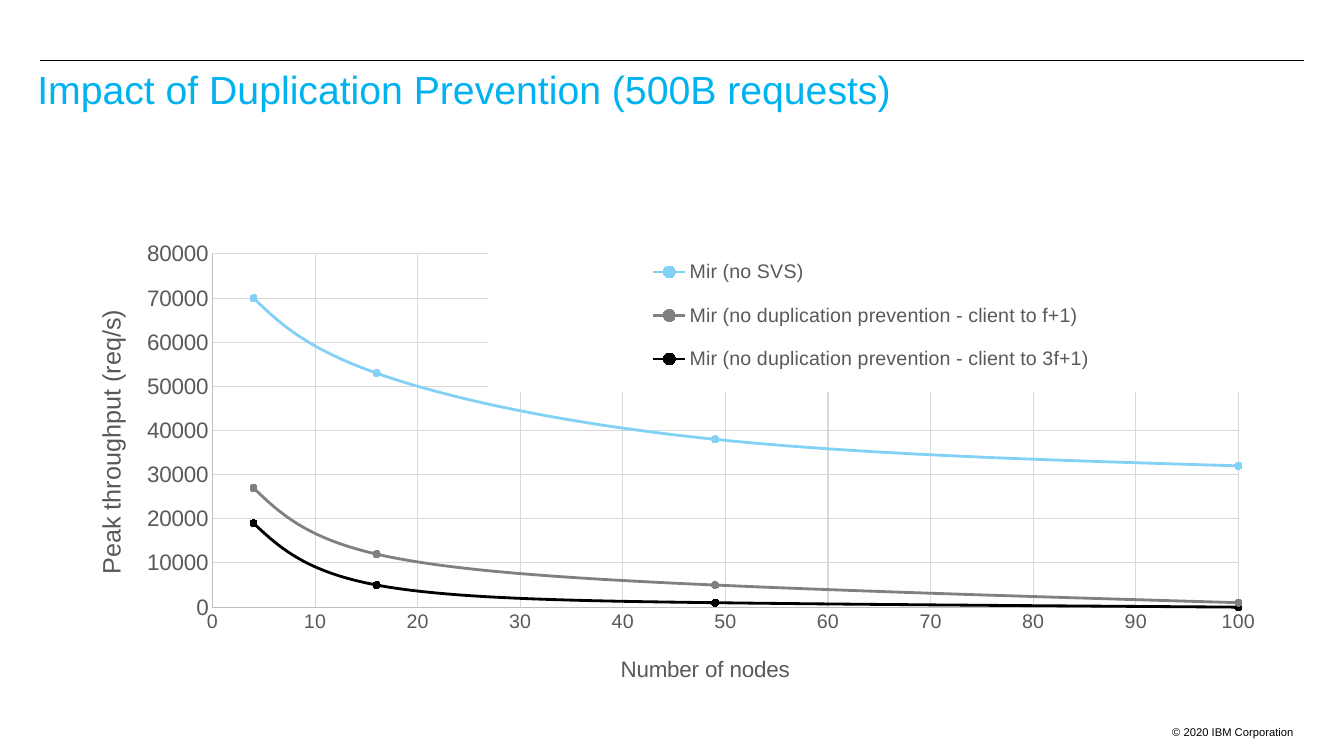
import pptx
import pptx.chart.data
import pptx.dml.color
import pptx.enum.chart
import pptx.enum.shapes
import pptx.enum.text
import pptx.oxml
import pptx.oxml.ns
import pptx.util
from pptx.util import Inches, Pt

FONT = "Arial"
TITLE = "Impact of Duplication Prevention (500B requests)"
COPYRIGHT = "© 2020 IBM Corporation"
NODES = [4, 16, 49, 100]
SERIES = [
    ("Mir (no SVS)", "83D1F5", [70000, 53000, 38000, 32000]),
    ("Mir (no duplication prevention - client to f+1)", "808080", [27000, 12000, 5000, 1000]),
    ("Mir (no duplication prevention - client to 3f+1)", "000000", [19000, 5000, 1000, 0]),
]
# title, title size, tick label size, maximum, major unit, title position in the chart
X_AXIS = ("Number of nodes", 16, 14, 100, 10, {"x": 0.473, "y": 0.908})
Y_AXIS = ("Peak throughput (req/s)", 18, 16, 80000, 10000, {"x": 0.069, "y": 0.267})
PLOT_AREA = {"x": 0.163, "y": 0.172, "w": 0.787, "h": 0.655}
LEGEND_AREA = {"x": 0.3745, "y": 0.145, "w": 0.588, "h": 0.282}
GREY_TEXT = "595959"
NAMESPACES = pptx.oxml.ns.nsdecls("c", "a")


def color(hex_value):
    return pptx.dml.color.RGBColor.from_string(hex_value)


def style_font(font, size, hex_value):
    font.name = FONT
    font.size = Pt(size)
    font.bold = False
    font.color.rgb = color(hex_value)


def style_line(line, hex_value, width=0.75):
    line.color.rgb = color(hex_value)
    line.width = Pt(width)


def write_text(frame, text, size, hex_value, align=None, line_spacing=None):
    paragraph = frame.paragraphs[0]
    run = paragraph.add_run()
    run.text = text
    style_font(run.font, size, hex_value)
    if align is not None:
        paragraph.alignment = align
    if line_spacing is not None:
        paragraph.line_spacing = line_spacing


def place(element, area, index, inner=False):
    """Give a chart part a manual layout in fractions of the chart."""
    for old in element.findall(pptx.oxml.ns.qn("c:layout")):
        element.remove(old)
    target = '<c:layoutTarget val="inner"/>' if inner else ""
    modes = "".join(f'<c:{key}Mode val="edge"/>' for key in area if key in "xy")
    values = "".join(f'<c:{key} val="{value}"/>' for key, value in area.items())
    element.insert(index, pptx.oxml.parse_xml(
        f"<c:layout {NAMESPACES}><c:manualLayout>{target}{modes}{values}"
        "</c:manualLayout></c:layout>"))


def format_axis(axis, title, title_size, tick_size, maximum, unit, title_area):
    axis.minimum_scale = 0
    axis.maximum_scale = maximum
    axis.major_unit = unit
    axis.major_tick_mark = axis.minor_tick_mark = pptx.enum.chart.XL_TICK_MARK.NONE
    axis.has_major_gridlines = True
    style_line(axis.major_gridlines.format.line, "D9D9D9")
    style_line(axis.format.line, "BFBFBF")
    style_font(axis.tick_labels.font, tick_size, GREY_TEXT)
    axis.tick_labels.number_format = "General"
    axis.tick_labels.number_format_is_linked = False
    axis.has_title = True
    write_text(axis.axis_title.text_frame, title, title_size, GREY_TEXT)
    place(axis.axis_title._element, title_area, 1)


def format_series(series, hex_value):
    style_line(series.format.line, hex_value, 2)
    marker = series.marker
    marker.style = pptx.enum.chart.XL_MARKER_STYLE.CIRCLE
    marker.size = 5
    marker.format.fill.solid()
    marker.format.fill.fore_color.rgb = color(hex_value)
    style_line(marker.format.line, hex_value)
    for smooth in series._element.findall(pptx.oxml.ns.qn("c:smooth")):
        smooth.set("val", "1")


def format_legend(chart):
    chart.has_legend = True
    legend = chart.legend
    legend.position = pptx.enum.chart.XL_LEGEND_POSITION.BOTTOM
    legend.include_in_layout = False
    style_font(legend.font, 14, GREY_TEXT)
    place(legend._element, LEGEND_AREA, 1)
    overlay = legend._element.find(pptx.oxml.ns.qn("c:overlay"))
    overlay.addnext(pptx.oxml.parse_xml(
        f'<c:spPr {NAMESPACES}><a:solidFill><a:srgbClr val="FFFFFF"/></a:solidFill>'
        "<a:ln><a:noFill/></a:ln></c:spPr>"))


def add_throughput_chart(slide):
    data = pptx.chart.data.XyChartData()
    for name, _, values in SERIES:
        points = data.add_series(name)
        for nodes, throughput in zip(NODES, values):
            points.add_data_point(nodes, throughput)
    chart = slide.shapes.add_chart(
        pptx.enum.chart.XL_CHART_TYPE.XY_SCATTER_SMOOTH,
        Inches(0), Inches(1.6), Inches(12.93), Inches(5.35), data).chart
    chart.has_title = False
    style_font(chart.font, 10, "000000")
    plot = chart.plots[0]
    plot.vary_by_categories = False
    for series, (_, hex_value, _) in zip(plot.series, SERIES):
        format_series(series, hex_value)
    format_axis(chart.category_axis, *X_AXIS)
    format_axis(chart.value_axis, *Y_AXIS)
    format_legend(chart)
    plot_area = chart._chartSpace.find(".//" + pptx.oxml.ns.qn("c:plotArea"))
    place(plot_area, PLOT_AREA, 0, inner=True)


def main():
    presentation = pptx.Presentation()
    presentation.slide_width = Inches(13.33)
    presentation.slide_height = Inches(7.5)
    slide = presentation.slides.add_slide(presentation.slide_layouts[5])

    rule = slide.shapes.add_connector(
        pptx.enum.shapes.MSO_CONNECTOR.STRAIGHT,
        Inches(0.4), Inches(0.6), Inches(12.93), Inches(0.6))
    style_line(rule.line, "000000")
    rule._element.spPr.append(pptx.oxml.parse_xml(f"<a:effectLst {NAMESPACES}/>"))

    title = slide.shapes.title
    title.left, title.top = Inches(0.27), Inches(0.65)
    title.width, title.height = Inches(12.67), Inches(0.8)
    title.text_frame.vertical_anchor = pptx.enum.text.MSO_ANCHOR.TOP
    write_text(title.text_frame, TITLE, 28, "00B2EF",
               align=pptx.enum.text.PP_ALIGN.LEFT, line_spacing=0.9)

    add_throughput_chart(slide)

    footer = slide.shapes.add_textbox(Inches(10.93), Inches(7.15), Inches(2), Inches(0.2))
    footer.text_frame.word_wrap = True
    write_text(footer.text_frame, COPYRIGHT, 8, "000000",
               align=pptx.enum.text.PP_ALIGN.RIGHT)

    presentation.save("out.pptx")


if __name__ == "__main__":
    main()
